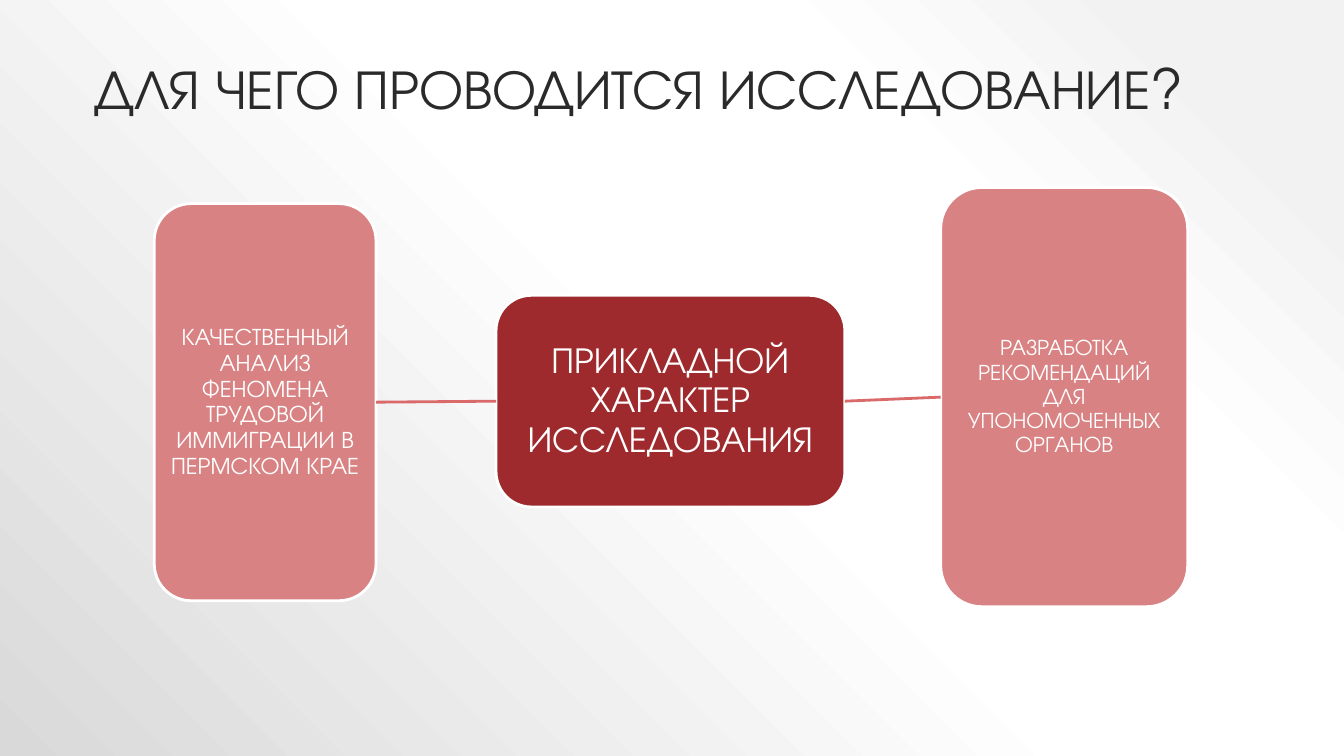
"""Build a slide on the purpose of the study: a central idea joined to two outcomes."""
from lxml import etree
from pptx import Presentation
from pptx.dml.color import RGBColor
from pptx.enum.shapes import MSO_CONNECTOR, MSO_SHAPE
from pptx.enum.text import MSO_ANCHOR, PP_ALIGN
from pptx.oxml import parse_xml
from pptx.oxml.ns import nsdecls, qn
from pptx.util import Inches, Pt

ROUNDED = MSO_SHAPE.ROUNDED_RECTANGLE
STRAIGHT = MSO_CONNECTOR.STRAIGHT
MIDDLE, BOTTOM = MSO_ANCHOR.MIDDLE, MSO_ANCHOR.BOTTOM
LEFT, CENTER = PP_ALIGN.LEFT, PP_ALIGN.CENTER
LEFT_SIDE, RIGHT_SIDE = 1, 3

FONT = "TeX Gyre Adventor"
WHITE = RGBColor(0xFF, 0xFF, 0xFF)
INK = RGBColor(0x2A, 0x2A, 0x2A)
DARK_RED = RGBColor(0x9E, 0x2A, 0x2D)
PINK = RGBColor(0xD9, 0x82, 0x83)
LINK_RED = RGBColor(0xDA, 0x69, 0x6A)
BACKGROUND_STOPS = [(10, "F2F2F2"), (28, "FFFFFF"), (48, "FFFFFF"), (100, "D9D9D9")]


def write(frame, text, size, color, align, anchor):
    frame.word_wrap = True
    frame.vertical_anchor = anchor
    paragraph = frame.paragraphs[0]
    paragraph.alignment = align
    paragraph.line_spacing = 0.9
    run = paragraph.add_run()
    run.text = text
    run.font.name = FONT
    run.font.size = Pt(size)
    run.font.color.rgb = color


def add_box(left, top, width, height, fill, text, size, inset):
    box = slide.shapes.add_shape(
        ROUNDED, Inches(left), Inches(top), Inches(width), Inches(height))
    box.shadow.inherit = False
    box.fill.solid()
    box.fill.fore_color.rgb = fill
    box.line.color.rgb = WHITE
    box.line.width = Pt(2)
    frame = box.text_frame
    frame.margin_left = frame.margin_right = Inches(inset)
    frame.margin_top = frame.margin_bottom = Inches(inset)
    write(frame, text, size, WHITE, CENTER, MIDDLE)
    return box


prs = Presentation()
prs.slide_width = Inches(13.33)
prs.slide_height = Inches(7.5)
slide = prs.slides.add_slide(prs.slide_layouts[6])

stops = "".join(
    f'<a:gs pos="{position * 1000}"><a:srgbClr val="{color}"/></a:gs>'
    for position, color in BACKGROUND_STOPS)
background = parse_xml(
    f'<p:bg {nsdecls("p", "a")}><p:bgPr><a:gradFill rotWithShape="1">'
    f'<a:gsLst>{stops}</a:gsLst><a:path path="circle">'
    '<a:fillToRect l="100000" b="100000"/></a:path></a:gradFill>'
    '<a:effectLst/></p:bgPr></p:bg>')
slide.element.find(qn("p:cSld")).insert(0, background)

title = slide.shapes.add_textbox(Inches(0.84), Inches(0.01), Inches(12.28), Inches(1.24))
write(title.text_frame, "ДЛЯ ЧЕГО ПРОВОДИТСЯ ИССЛЕДОВАНИЕ?", 39.6, INK, LEFT, BOTTOM)

applied_nature = add_box(4.92, 2.93, 3.46, 2.1, DARK_RED,
                         "ПРИКЛАДНОЙ ХАРАКТЕР ИССЛЕДОВАНИЯ", 26, 0.07)
analysis = add_box(1.53, 2.02, 2.2, 3.94, PINK,
                   "КАЧЕСТВЕННЫЙ АНАЛИЗ ФЕНОМЕНА ТРУДОВОЙ ИММИГРАЦИИ В ПЕРМСКОМ КРАЕ",
                   17, 0.05)
recommendations = add_box(9.33, 1.86, 2.45, 4.16, PINK,
                          "РАЗРАБОТКА РЕКОМЕНДАЦИЙ ДЛЯ УПОНОМОЧЕННЫХ ОРГАНОВ", 16, 0.04)

for outcome, near_side, far_side in [(analysis, LEFT_SIDE, RIGHT_SIDE),
                                     (recommendations, RIGHT_SIDE, LEFT_SIDE)]:
    link = slide.shapes.add_connector(STRAIGHT, 0, 0, 0, 0)
    link.begin_connect(applied_nature, near_side)
    link.end_connect(outcome, far_side)
    link.line.color.rgb = LINK_RED
    link.line.width = Pt(2)
    etree.SubElement(link.element.spPr, qn("a:effectLst"))

prs.save("out.pptx")
